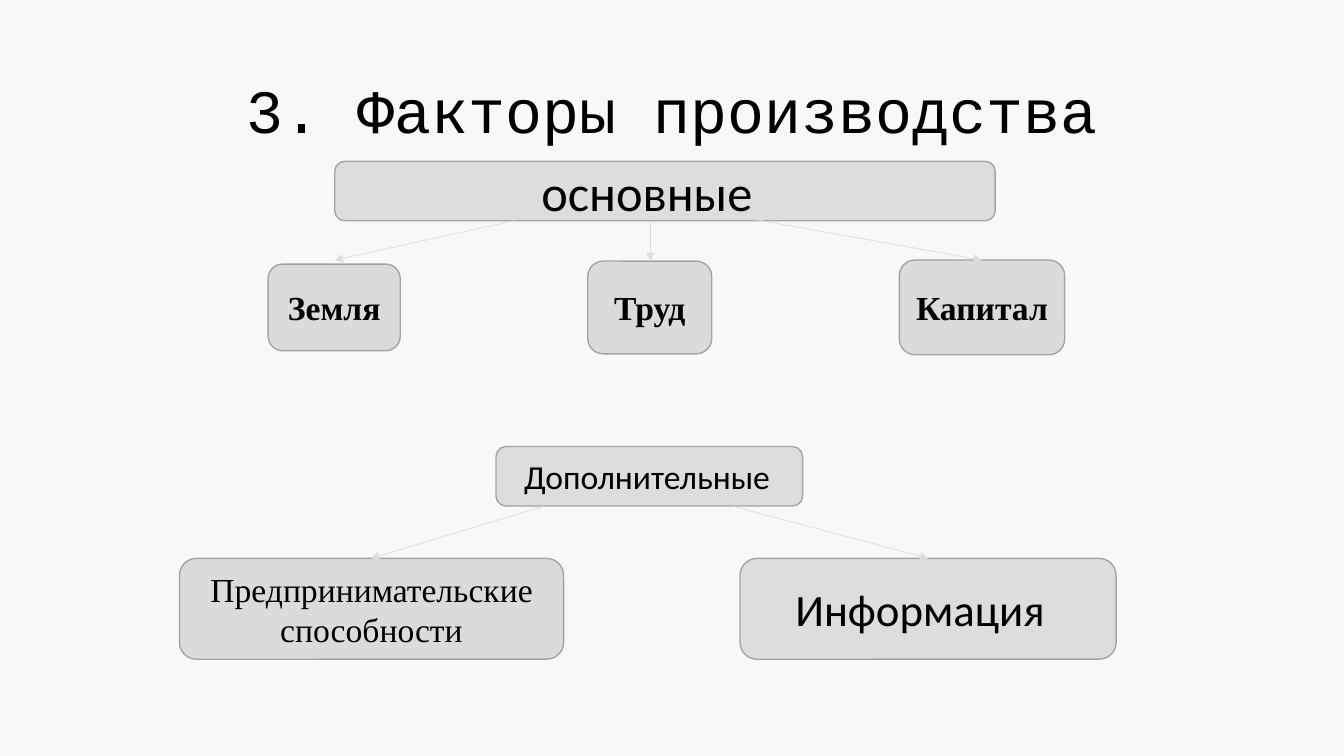
import pptx
import pptx.util
import pptx.dml.color
import pptx.enum.shapes
import pptx.enum.text
import pptx.oxml.ns
import pptx.oxml.xmlchemy
from dataclasses import dataclass
from pptx.util import Inches


@dataclass(frozen=True)
class Theme:
    background: str = "F8F8F8"
    ink: str = "000000"
    group_fill: str = "DDDDDD"
    factor_fill: str = "DBDBDB"
    border: str = "A3A3A3"
    arrow: str = "DDDDDD"
    heading_font: str = "Courier New"
    group_font: str = "Calibri"
    factor_font: str = "Times New Roman"
    heading_size: int = 44
    main_group_size: int = 36
    information_size: int = 32
    factor_size: int = 24


theme = Theme()
rgb = pptx.dml.color.RGBColor.from_string
centre = pptx.enum.text.PP_ALIGN.CENTER
left_aligned = pptx.enum.text.PP_ALIGN.LEFT


def write(frame, text, font, size, bold=False, align=centre):
    frame.text = text
    frame.word_wrap = True
    frame.vertical_anchor = pptx.enum.text.MSO_ANCHOR.MIDDLE
    paragraph = frame.paragraphs[0]
    paragraph.alignment = align
    run_font = paragraph.runs[0].font
    run_font.name = font
    run_font.size = pptx.util.Pt(size)
    run_font.bold = bold
    run_font.color.rgb = rgb(theme.ink)


def add_box(bounds, fill):
    box = slide.shapes.add_shape(
        pptx.enum.shapes.MSO_SHAPE.ROUNDED_RECTANGLE, *map(Inches, bounds))
    box.shadow.inherit = False
    box.fill.solid()
    box.fill.fore_color.rgb = rgb(fill)
    box.line.color.rgb = rgb(theme.border)
    box.line.width = pptx.util.Pt(1)
    return box.text_frame


presentation = pptx.Presentation()
presentation.slide_width = Inches(13.33)
presentation.slide_height = Inches(7.5)
slide = presentation.slides.add_slide(presentation.slide_layouts[5])
slide.background.fill.solid()
slide.background.fill.fore_color.rgb = rgb(theme.background)

heading = slide.shapes.title
heading.left, heading.top = Inches(0.92), Inches(0.4)
heading.width, heading.height = Inches(11.5), Inches(1.45)
write(heading.text_frame, "3. Факторы производства", theme.heading_font, theme.heading_size)
heading.text_frame.paragraphs[0].line_spacing = 0.9

factors = [
    ("Земля", (2.66, 2.62, 1.31, 0.86), True),
    ("Труд", (5.83, 2.59, 1.23, 0.92), True),
    ("Капитал", (8.92, 2.58, 1.64, 0.94), True),
    ("Предпринимательские способности", (1.78, 5.54, 3.81, 1), False),
]
for factor, bounds, bold in factors:
    write(add_box(bounds, theme.factor_fill), factor, theme.factor_font, theme.factor_size, bold)

indented_labels = [
    ("основные", (3.32, 1.6, 6.55, 0.59), theme.main_group_size, 2.02),
    ("Дополнительные", (4.92, 4.43, 3.04, 0.59), theme.factor_size, 0.25),
    ("Информация", (7.34, 5.54, 3.73, 1), theme.information_size, 0.5),
]
for label, bounds, size, indent in indented_labels:
    frame = add_box(bounds, theme.group_fill)
    write(frame, label, theme.group_font, size, align=left_aligned)
    frame.margin_left = Inches(indent)
    frame.margin_right = frame.margin_top = frame.margin_bottom = 0

arrows = [
    (5.1, 2.19, 3.32, 2.58),
    (6.45, 2.19, 6.45, 2.59),
    (7.5, 2.18, 9.74, 2.58),
    (5.4, 5.02, 3.68, 5.54),
    (7.26, 5.02, 9.21, 5.54),
]
for ends in arrows:
    arrow = slide.shapes.add_connector(
        pptx.enum.shapes.MSO_CONNECTOR.STRAIGHT, *map(Inches, ends))
    arrow.line.color.rgb = rgb(theme.arrow)
    arrow.line.width = pptx.util.Pt(0.5)
    tip = pptx.oxml.xmlchemy.OxmlElement("a:tailEnd")
    tip.set("type", "triangle")
    properties = arrow.element.find(pptx.oxml.ns.qn("p:spPr"))
    properties.find(pptx.oxml.ns.qn("a:ln")).append(tip)
    properties.append(pptx.oxml.xmlchemy.OxmlElement("a:effectLst"))

presentation.save("out.pptx")
